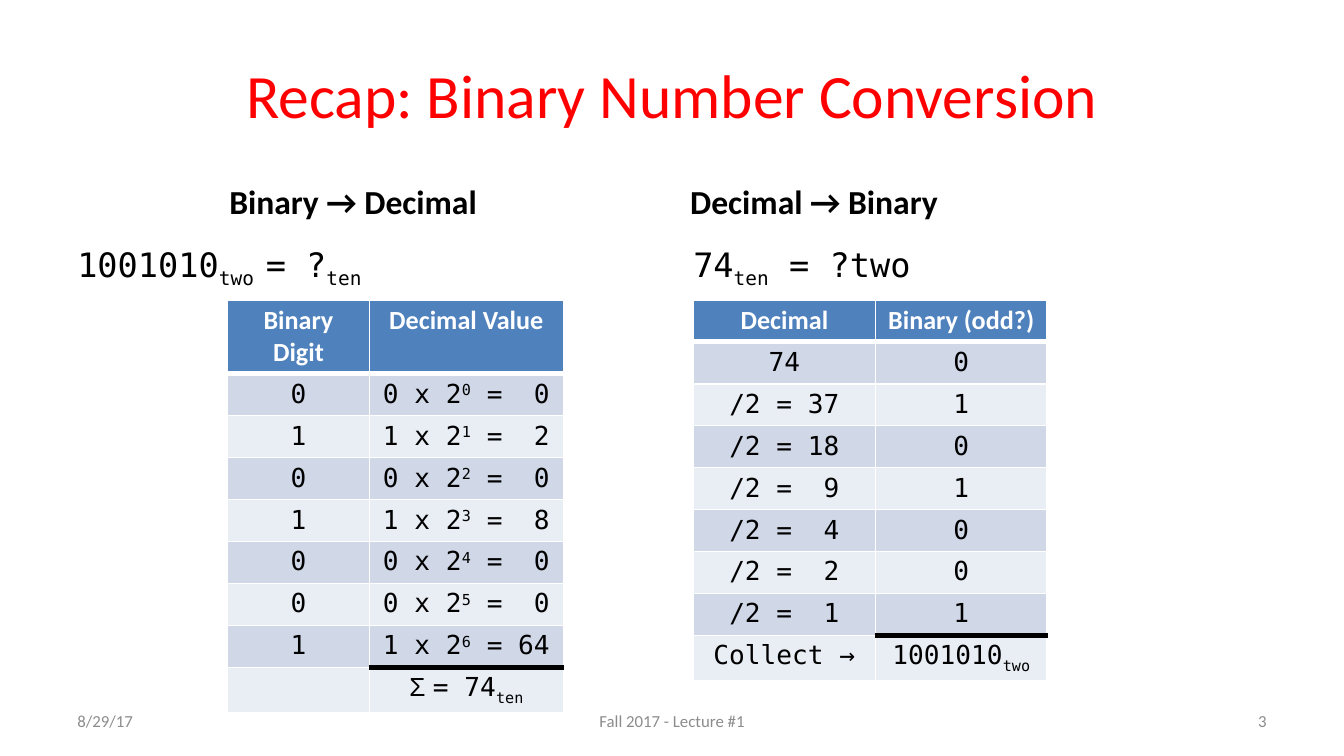
from lxml.etree import SubElement
from pptx import Presentation
from pptx.dml.color import RGBColor
from pptx.enum.text import MSO_ANCHOR as Anchor, PP_ALIGN as Align
from pptx.oxml.ns import qn
from pptx.util import Pt

MONO = "DejaVu Sans Mono"
SANS = "Calibri"
SUBSCRIPT = -25
SUPERSCRIPT = 30
INSET_X, INSET_Y = 5.4, 2.7
ROW_HEIGHT = 22.5
BLACK, WHITE, GRAY = "000000", "FFFFFF", "8C8C8C"
HEADER_FILL = "4F81BD"
BAND_FILLS = ["D0D8E8", "E9EDF4"]


def color(value):
    return RGBColor.from_string(value)


def write_runs(paragraph, pieces, size, font, ink, bold=False, align=Align.LEFT):
    paragraph.alignment = align
    for text, baseline, *override in pieces:
        run = paragraph.add_run()
        run.text = text
        run.font.name = override[0] if override else font
        run.font.size = Pt(size)
        run.font.bold = bold
        run.font.color.rgb = color(ink)
        if baseline:
            run.font._element.set("baseline", str(baseline * 1000))
    if not pieces:
        SubElement(paragraph._p, qn("a:endParaRPr"), sz=str(size * 100))


def set_insets(target):
    target.margin_left = target.margin_right = Pt(INSET_X)
    target.margin_top = target.margin_bottom = Pt(INSET_Y)


def add_text(slide, box, pieces, size, font, ink, anchor=Anchor.MIDDLE, **style):
    shape = slide.shapes.add_textbox(*map(Pt, box))
    text_frame = shape.text_frame
    text_frame.word_wrap = True
    text_frame.vertical_anchor = anchor
    set_insets(text_frame)
    write_runs(text_frame.paragraphs[0], pieces, size, font, ink, **style)


def set_border(cell, side, ink, width):
    line = SubElement(cell._tc.get_or_add_tcPr(), qn(f"a:ln{side}"), w=str(Pt(width)))
    fill = SubElement(line, qn("a:solidFill"))
    SubElement(fill, qn("a:srgbClr"), val=ink)


def add_conversion_table(slide, left, top, column_widths, header_height, rows):
    heights = [header_height] + [ROW_HEIGHT] * (len(rows) - 1)
    frame = slide.shapes.add_table(
        len(rows), len(column_widths), Pt(left), Pt(top),
        Pt(sum(column_widths)), Pt(sum(heights)))
    table = frame.table
    for column, width in zip(table.columns, column_widths):
        column.width = Pt(width)
    for row, height in zip(table.rows, heights):
        row.height = Pt(height)

    last = len(rows) - 1
    thin, header_rule, total_rule = (WHITE, 1), (WHITE, 3), (BLACK, 3)
    for row_index, row in enumerate(rows):
        is_header = row_index == 0
        for column_index, pieces in enumerate(row):
            cell = table.cell(row_index, column_index)
            set_insets(cell)
            rules = {1: header_rule}
            if column_index == 1:
                rules[last] = total_rule
            borders = {"L": thin, "R": thin,
                       "T": rules.get(row_index, thin),
                       "B": rules.get(row_index + 1, thin)}
            for side, border in borders.items():
                set_border(cell, side, *border)
            cell.fill.solid()
            cell.fill.fore_color.rgb = color(
                HEADER_FILL if is_header else BAND_FILLS[(row_index - 1) % 2])
            write_runs(cell.text_frame.paragraphs[0], pieces, 14,
                       SANS if is_header else MONO,
                       WHITE if is_header else BLACK,
                       bold=is_header, align=Align.CENTER)


def add_title(slide, box):
    add_text(slide, box, [("Recap: Binary Number Conversion", 0)], 33, SANS,
             "FF0000", align=Align.CENTER)


def add_question(slide, heading_box, heading, body_box, pieces):
    add_text(slide, heading_box, [(heading, 0)], 18, SANS, BLACK,
             anchor=Anchor.BOTTOM, bold=True)
    add_text(slide, body_box, pieces, 18, MONO, BLACK, anchor=Anchor.TOP)


def add_binary_to_decimal(slide):
    add_question(slide, (117.4, 83.5, 238.3, 37.5), "Binary → Decimal",
                 (36, 128, 318, 233.3),
                 [("1001010", 0), ("two ", SUBSCRIPT), ("= ?", 0), ("ten", SUBSCRIPT)])
    rows = [[[("Binary Digit", 0)], [("Decimal Value", 0)]]]
    for power, digit in enumerate(reversed("1001010")):
        value = int(digit) * 2 ** power
        rows.append([[(digit, 0)],
                     [(f"{digit} x 2", 0), (str(power), SUPERSCRIPT), (f" = {value:2d}", 0)]])
    rows.append([[], [("Σ ", 0, "Arial"), ("= 74", 0), ("ten", SUBSCRIPT)]])
    add_conversion_table(slide, 121.9, 160.6, [76, 104], 39.6, rows)


def add_decimal_to_binary(slide):
    add_question(slide, (364.3, 83.5, 239, 37.5), "Decimal → Binary",
                 (366, 128, 318, 233.3),
                 [("74", 0), ("ten", SUBSCRIPT), (" = ?two", 0)])
    rows = [[[("Decimal", 0)], [("Binary (odd?)", 0)]]]
    for step in range(7):
        value = 74 // 2 ** step
        label = f"/2 = {value:2d}" if step else str(value)
        rows.append([[(label, 0)], [(str(value % 2), 0)]])
    rows.append([[("Collect →", 0)], [("1001010", 0), ("two", SUBSCRIPT)]])
    add_conversion_table(slide, 371.5, 160.6, [97.5, 92], ROW_HEIGHT, rows)


def add_footer(slide, top, height):
    for left, width, text, align in [
        (36, 168, "8/29/17", Align.LEFT),
        (246, 228, "Fall 2017 - Lecture #1", Align.CENTER),
        (516, 168, "3", Align.RIGHT),
    ]:
        add_text(slide, (left, top, width, height), [(text, 0)], 9, SANS, GRAY, align=align)


def main():
    presentation = Presentation()
    presentation.slide_width = Pt(720)
    presentation.slide_height = Pt(405)
    slide = presentation.slides.add_slide(presentation.slide_layouts[6])
    add_title(slide, (36, 16.5, 648, 67.5))
    add_binary_to_decimal(slide)
    add_decimal_to_binary(slide)
    add_footer(slide, 375.4, 21.6)
    presentation.save("out.pptx")


if __name__ == "__main__":
    main()
